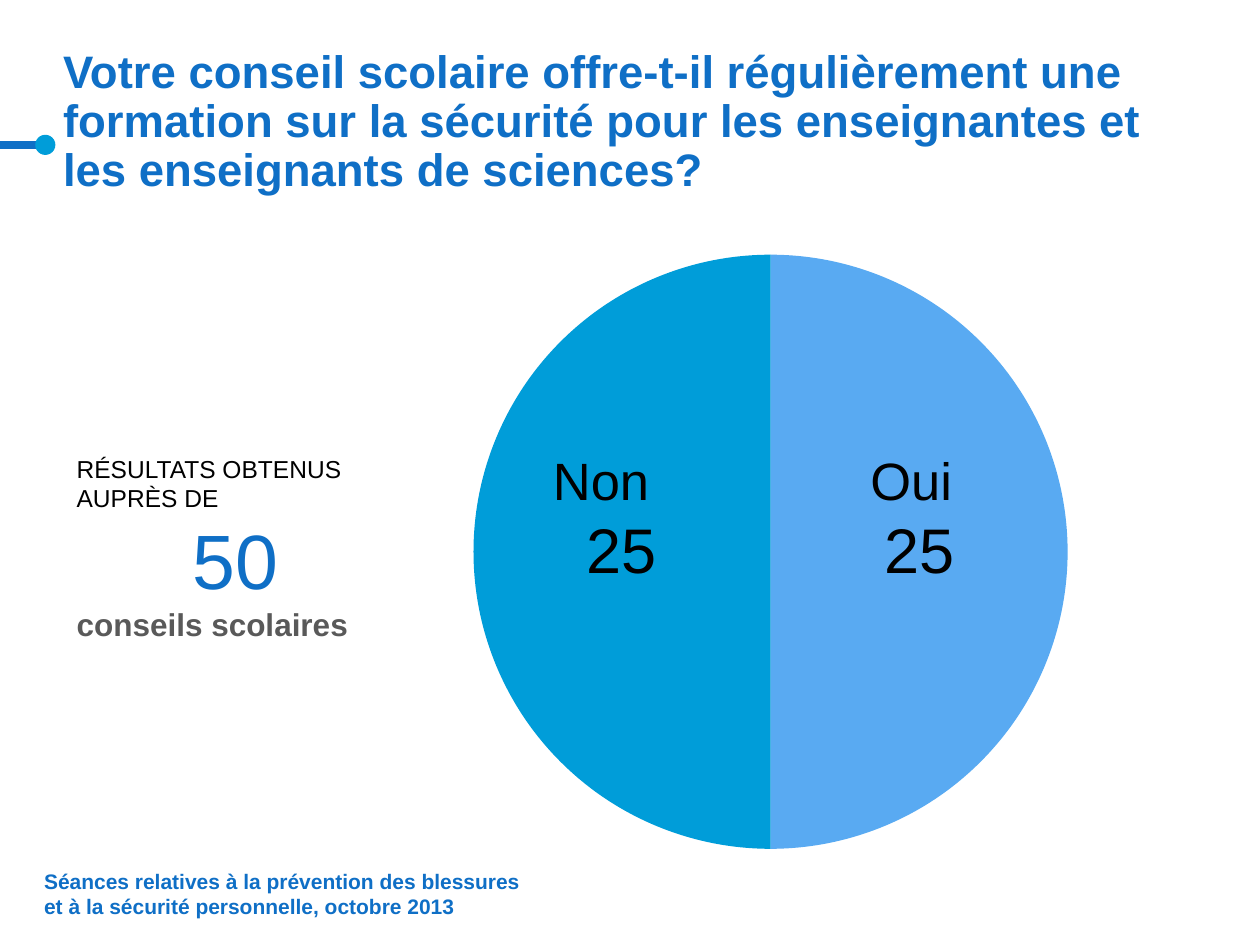
from dataclasses import dataclass

from lxml import etree
from pptx import Presentation
from pptx.chart.data import CategoryChartData
from pptx.dml.color import RGBColor
from pptx.enum.chart import XL_CHART_TYPE, XL_LABEL_POSITION
from pptx.enum.shapes import MSO_CONNECTOR, MSO_SHAPE
from pptx.enum.text import MSO_ANCHOR, PP_ALIGN
from pptx.oxml import parse_xml
from pptx.oxml.ns import nsdecls, qn
from pptx.util import Inches, Pt

PIE = XL_CHART_TYPE.PIE
LABEL_CENTER = XL_LABEL_POSITION.CENTER
STRAIGHT = MSO_CONNECTOR.STRAIGHT
OVAL = MSO_SHAPE.OVAL
TOP, BOTTOM = MSO_ANCHOR.TOP, MSO_ANCHOR.BOTTOM
CENTER = PP_ALIGN.CENTER


@dataclass(frozen=True)
class Theme:
    font: str = "Arial"
    blue: str = "0F6FC6"
    cyan: str = "009DD9"
    sky: str = "59AAF2"
    black: str = "000000"
    grey: str = "595959"
    title: int = 26
    footer: int = 12
    caption: int = 14
    strong: int = 18
    answer: int = 30
    value: int = 36
    total: int = 44


T = Theme()


def rgb(value):
    return RGBColor.from_string(value)


def format_font(font, size, color=T.black, bold=False):
    font.name = T.font
    font.size = Pt(size)
    font.bold = bold
    font.color.rgb = rgb(color)


def add_run(p, text, **fmt):
    r = p.add_run()
    r.text = text
    format_font(r.font, **fmt)


def set_frame(tf, insets, anchor):
    tf.word_wrap = True
    tf.vertical_anchor = anchor
    tf.margin_left, tf.margin_top, tf.margin_right, tf.margin_bottom = map(Inches, insets)


def add_text(s, box, text, insets=(0.1, 0.05, 0.1, 0.05), anchor=TOP, **fmt):
    tf = s.shapes.add_textbox(*map(Inches, box)).text_frame
    set_frame(tf, insets, anchor)
    add_run(tf.paragraphs[0], text, **fmt)
    return tf


def set_title(s, text):
    sp = s.shapes.title
    sp.left, sp.top, sp.width, sp.height = map(Inches, (0.5, 0.29, 8.99, 1.26))
    set_frame(sp.text_frame, (0, 0.05, 0, 0), BOTTOM)
    p = sp.text_frame.paragraphs[0]
    p.alignment = PP_ALIGN.LEFT
    p.line_spacing = Pt(28)
    add_run(p, text, size=T.title, color=T.blue, bold=True)


def add_marker(s):
    line = s.shapes.add_connector(STRAIGHT, 0, Inches(1.15), Inches(0.35), Inches(1.15))
    line.line.color.rgb = rgb(T.blue)
    line.line.width = Pt(4.75)
    etree.SubElement(line._element.spPr, qn("a:effectLst"))
    dot = s.shapes.add_shape(OVAL, *map(Inches, (0.28, 1.07, 0.16, 0.16)))
    dot.shadow.inherit = False
    dot.fill.solid()
    dot.fill.fore_color.rgb = rgb(T.cyan)
    dot.line.fill.background()


def set_plot_layout(chart, x, y, w, h):
    area = chart._chartSpace.chart.plotArea
    for old in area.findall(qn("c:layout")):
        area.remove(old)
    area.insert(0, parse_xml(
        f'<c:layout {nsdecls("c")}><c:manualLayout><c:layoutTarget val="inner"/>'
        '<c:xMode val="edge"/><c:yMode val="edge"/>'
        f'<c:x val="{x}"/><c:y val="{y}"/><c:w val="{w}"/><c:h val="{h}"/>'
        "</c:manualLayout></c:layout>"))


def add_pie(s, box, values, colors):
    data = CategoryChartData()
    data.categories = [str(i) for i in range(1, len(values) + 1)]
    data.add_series("Series 1", values)
    chart = s.shapes.add_chart(PIE, *map(Inches, box), data).chart
    chart.has_legend = False
    chart.has_title = False
    format_font(chart.font, T.strong)
    set_plot_layout(chart, 0.11, 0.09, 0.74, 0.9)
    plot = chart.plots[0]
    plot.vary_by_categories = True
    for i, color in enumerate(colors):
        point = plot.series[0].points[i]
        point.format.fill.solid()
        point.format.fill.fore_color.rgb = rgb(color)
        point.format.line.fill.background()
    plot.has_data_labels = True
    labels = plot.data_labels
    labels.show_value = True
    labels.position = LABEL_CENTER
    format_font(labels.font, T.value)


def add_sample(s):
    tf = add_text(s, (0.51, 3.55, 2.83, 1.62), "RÉSULTATS OBTENUS AUPRÈS DE", size=T.caption)
    p = tf.add_paragraph()
    p.alignment = CENTER
    add_run(p, "50", size=T.total, color=T.blue)
    add_run(p, " ", size=T.answer)
    add_run(tf.add_paragraph(), "conseils scolaires", size=T.strong, color=T.grey, bold=True)


def main():
    prs = Presentation()
    prs.slide_width, prs.slide_height = Inches(10), Inches(7.5)
    s = prs.slides.add_slide(prs.slide_layouts[5])
    set_title(s, "Votre conseil scolaire offre-t-il régulièrement une formation sur la sécurité "
                 "pour les enseignantes et les enseignants de sciences?")
    add_pie(s, (3.03, 1.55, 6.43, 5.24), (25, 25), (T.sky, T.cyan))
    for text, left, width in (("Oui", 6.81, 0.94), ("Non", 4.29, 1.1)):
        add_text(s, (left, 3.51, width, 0.61), text, size=T.answer)
    add_sample(s)
    add_text(s, (0.35, 7.03, 3.95, 0.26),
             "Séances relatives à la prévention des blessures et à la sécurité personnelle, "
             "octobre 2013",
             insets=(0, 0, 0, 0), anchor=BOTTOM, size=T.footer, color=T.blue, bold=True)
    add_marker(s)
    prs.save("out.pptx")


if __name__ == "__main__":
    main()
